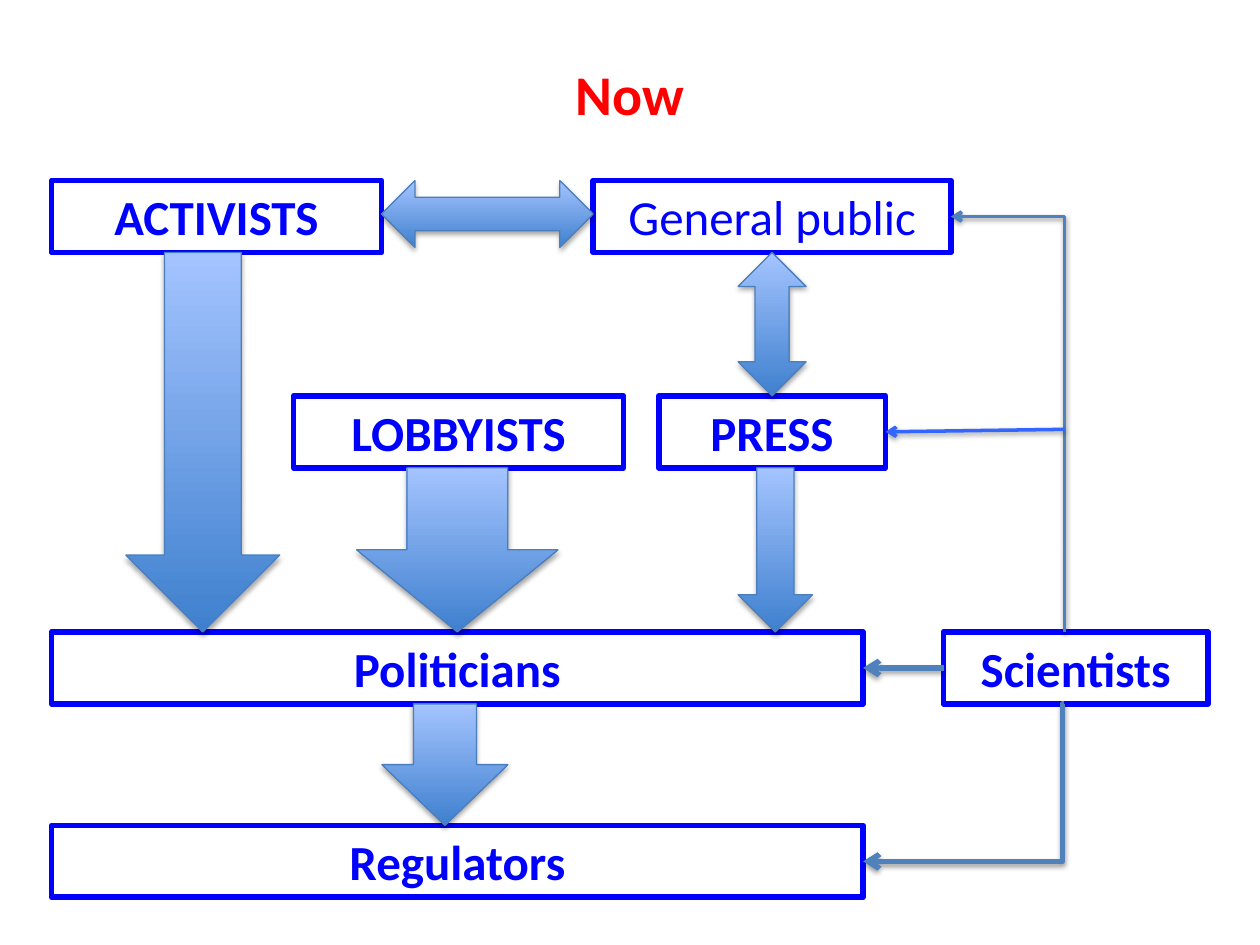
from typing import NamedTuple

from lxml.etree import SubElement
from pptx import Presentation
from pptx.dml.color import RGBColor
from pptx.enum.shapes import MSO_CONNECTOR as Link, MSO_SHAPE as Shape
from pptx.enum.text import MSO_AUTO_SIZE as AutoSize, PP_ALIGN as Align
from pptx.oxml.ns import qn
from pptx.util import Cm, Pt

BLUE, RED, STEEL, BRIGHT = "0000FF", "FF0000", "4F81BD", "3366FF"
ARROW_EDGE, ARROW_DARK, ARROW_LIGHT = "4B7EBC", "3F80CE", "A4C4FF"
BOX_HEIGHT = 1.45
ROW_PUBLIC, ROW_PRESS, ROW_POLITICS, ROW_REGULATION = 3.64, 7.98, 12.74, 16.64
LEFT, WIDE = 1.04, 16.36


class Actor(NamedTuple):
    label: str
    left: float
    top: float
    width: float
    bold: bool = True

    @property
    def right(self) -> float:
        return self.left + self.width

    @property
    def bottom(self) -> float:
        return self.top + BOX_HEIGHT

    @property
    def middle(self) -> float:
        return self.top + BOX_HEIGHT / 2


class Influence(NamedTuple):
    kind: Shape
    left: float
    top: float
    width: float
    height: float


class Advice(NamedTuple):
    start: tuple[float, float]
    end: tuple[float, float]
    weight: float
    color: str = STEEL
    bend: float | None = None  # share of the width before the turn


def rgb(color: str) -> RGBColor:
    return RGBColor.from_string(color)


def add_text(slide, text: str, left: float, top: float, width: float, height: float, *,
             size: float = 28, color: str = BLUE, bold: bool = True):
    box = slide.shapes.add_textbox(Cm(left), Cm(top), Cm(width), Cm(height))
    frame = box.text_frame
    frame.word_wrap = True
    frame.auto_size = AutoSize.SHAPE_TO_FIT_TEXT
    paragraph = frame.paragraphs[0]
    paragraph.alignment = Align.CENTER
    run = paragraph.add_run()
    run.text = text
    run.font.name, run.font.size, run.font.bold = "Calibri", Pt(size), bold
    run.font.color.rgb = rgb(color)
    return box


def add_shadow(effects, opacity: int, distance: float) -> None:
    shadow = SubElement(effects, qn("a:outerShdw"), blurRad=str(Pt(3.1)),
                        dist=str(Pt(distance)), dir="5400000", rotWithShape="0")
    black = SubElement(shadow, qn("a:srgbClr"), val="000000")
    SubElement(black, qn("a:alpha"), val=str(opacity * 1000))


def draw_actor(slide, actor: Actor) -> None:
    box = add_text(slide, actor.label, actor.left, actor.top, actor.width, BOX_HEIGHT,
                   bold=actor.bold)
    box.line.color.rgb = rgb(BLUE)
    box.line.width = Pt(3.25)


def draw_influence(slide, influence: Influence) -> None:
    kind, *place = influence
    arrow = slide.shapes.add_shape(kind, *map(Cm, place))
    arrow.fill.gradient()
    arrow.fill.gradient_angle = 90
    for stop, color in zip(arrow.fill.gradient_stops, (ARROW_DARK, ARROW_LIGHT)):
        stop.color.rgb = rgb(color)
    arrow.line.color.rgb = rgb(ARROW_EDGE)
    arrow.line.width = Pt(0.75)
    arrow.shadow.inherit = False
    add_shadow(arrow.element.spPr.find(qn("a:effectLst")), 35, 1.8)


def draw_advice(slide, advice: Advice) -> None:
    kind = Link.STRAIGHT if advice.bend is None else Link.ELBOW
    link = slide.shapes.add_connector(kind, *map(Cm, advice.start + advice.end))
    link.line.color.rgb = rgb(advice.color)
    link.line.width = Pt(advice.weight)
    properties = link.element.spPr
    SubElement(properties.find(qn("a:ln")), qn("a:tailEnd"), type="arrow")
    add_shadow(SubElement(properties, qn("a:effectLst")), 38, 1.6)
    if advice.bend is not None:
        guides = properties.find(qn("a:prstGeom")).find(qn("a:avLst"))
        SubElement(guides, qn("a:gd"), name="adj1", fmla=f"val {round(advice.bend * 100000)}")


def main() -> None:
    deck = Presentation()
    deck.slide_width, deck.slide_height = Cm(25.4), Cm(19.05)
    slide = deck.slides.add_slide(deck.slide_layouts[6])

    # Actors
    regulators = Actor("Regulators", LEFT, ROW_REGULATION, WIDE)
    scientists = Actor("Scientists", 19.02, ROW_POLITICS, 5.33)
    politicians = Actor("Politicians", LEFT, ROW_POLITICS, WIDE)
    lobbyists = Actor("LOBBYISTS", 5.92, ROW_PRESS, 6.65)
    activists = Actor("ACTIVISTS", LEFT, ROW_PUBLIC, 6.65)
    public = Actor("General public", 11.96, ROW_PUBLIC, 7.21, bold=False)
    press = Actor("PRESS", 13.28, ROW_PRESS, 4.57)
    for actor in (regulators, scientists, politicians, lobbyists, activists, public, press):
        draw_actor(slide, actor)

    # Block arrows: who influences whom
    draw_influence(slide, Influence(Shape.LEFT_RIGHT_ARROW, activists.right, activists.top,
                                    public.left - activists.right, 1.35))
    for kind, source, target, left, width in (
        (Shape.DOWN_ARROW, lobbyists, politicians, 7.19, 4.06),
        (Shape.DOWN_ARROW, activists, politicians, 2.54, 3.1),
        (Shape.UP_DOWN_ARROW, public, press, 14.88, 1.37),
        (Shape.DOWN_ARROW, press, politicians, 14.88, 1.5),
        (Shape.DOWN_ARROW, politicians, regulators, 7.7, 2.54),
    ):
        draw_influence(slide, Influence(kind, left, source.bottom, width,
                                        target.top - source.bottom))

    # Thin arrows: advice from the scientists
    trunk = 21.46
    for advice in (
        Advice((trunk, scientists.bottom), (regulators.right, regulators.middle), 3, bend=0.01),
        Advice((scientists.left, scientists.middle), (politicians.right, politicians.middle), 3),
        Advice((trunk, scientists.top), (public.right, public.middle), 2, bend=0),
        Advice((trunk, press.middle - 0.05), (press.right, press.middle), 2, BRIGHT),
    ):
        draw_advice(slide, advice)

    # Title
    add_text(slide, "Now", 6.6, 1.07, 12.2, 1.62, size=32, color=RED)

    deck.save("out.pptx")


if __name__ == "__main__":
    main()
